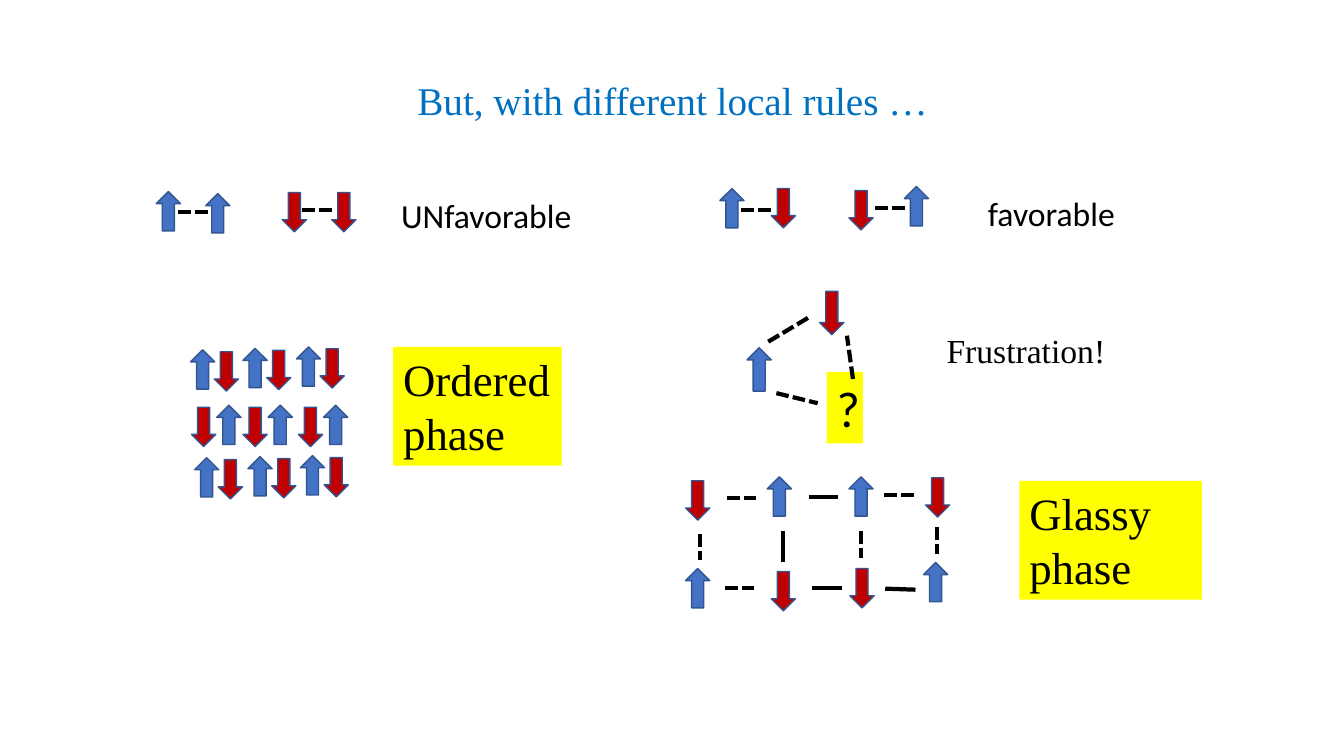
from lxml import etree
from pptx import Presentation
from pptx.dml.color import RGBColor
from pptx.enum import dml, shapes, text
from pptx.oxml.ns import qn
from pptx.util import Inches, Pt

BLUE = RGBColor(0x44, 0x72, 0xC4)
RED = RGBColor(0xC0, 0x00, 0x00)
OUTLINE = RGBColor(0x32, 0x54, 0x91)
TITLE_BLUE = RGBColor(0x00, 0x70, 0xC0)
YELLOW = RGBColor(0xFF, 0xFF, 0x00)
BLACK = RGBColor(0x00, 0x00, 0x00)
SERIF, SANS = "Times New Roman", "Calibri"
SPIN_W, SPIN_H = 0.24, 0.39

PAIRS = [
    ("up", 1.55, 1.9), ("up", 2.04, 1.92),
    ("down", 2.8, 1.91), ("down", 3.29, 1.91),
    ("up", 7.14, 1.87), ("down", 7.65, 1.87),
    ("down", 8.42, 1.89), ("up", 8.97, 1.85),
]
GLASS = [
    ("down", 6.8, 4.77), ("up", 7.61, 4.73), ("up", 8.42, 4.73), ("down", 9.18, 4.74),
    ("up", 6.8, 5.64), ("down", 7.65, 5.67), ("down", 8.43, 5.64), ("up", 9.16, 5.58),
]
DASHED_BONDS = [
    (1.77, 2.1, 2.09, 2.1), (3, 2.08, 3.32, 2.08),
    (7.35, 2.08, 7.67, 2.08), (8.68, 2.06, 9, 2.06),
    (7.62, 3.39, 8.02, 3.15), (7.7, 3.9, 8.11, 4), (8.46, 3.76, 8.4, 3.33),
    (7.21, 4.94, 7.53, 4.94), (8.77, 4.91, 9.09, 4.91), (7.19, 5.83, 7.51, 5.83),
    (6.94, 5.3, 6.94, 5.56), (8.54, 5.27, 8.54, 5.54), (9.29, 5.23, 9.29, 5.5),
]
SOLID_BONDS = [
    (8.02, 4.93, 8.31, 4.93), (7.77, 5.27, 7.77, 5.58),
    (8.05, 5.83, 8.35, 5.83), (8.78, 5.84, 9.08, 5.85),
]
LABELS = [
    ("UNfavorable", (3.88, 1.88, 1.93, 0.5), SANS, 24, None),
    ("favorable", (9.7, 1.86, 1.83, 0.5), SANS, 24, None),
    ("Frustration!", (9.29, 3.22, 2.24, 0.5), SERIF, 24, None),
    ("Ordered\nphase", (3.9, 3.44, 1.67, 1.18), SERIF, 32, YELLOW),
    ("?", (8.2, 3.69, 0.36, 0.71), SANS, 36, YELLOW),
    ("Glassy\nphase", (10.11, 4.77, 1.81, 1.18), SERIF, 32, YELLOW),
]


def box(*lengths):
    return [Inches(v) for v in lengths]


def style(p, size, name, color):
    for key, value in {"size": Pt(size), "name": name}.items():
        setattr(p.font, key, value)
    p.font.color.rgb = color


def add_title(s, words):
    sp = s.shapes.title
    sp.left, sp.top, sp.width, sp.height = box(0.92, 0.4, 11.5, 1.23)
    tf = sp.text_frame
    tf.text = words
    tf.vertical_anchor = text.MSO_ANCHOR.MIDDLE
    p = tf.paragraphs[0]
    for key, value in {"alignment": text.PP_ALIGN.CENTER, "line_spacing": 0.9}.items():
        setattr(p, key, value)
    style(p, 28, SERIF, TITLE_BLUE)


def add_label(s, words, at, name, size, fill):
    sp = s.shapes.add_textbox(*box(*at))
    if fill is not None:
        sp.fill.solid()
        sp.fill.fore_color.rgb = fill
    tf = sp.text_frame
    tf.word_wrap = True
    tf.text = words
    for p in tf.paragraphs:
        style(p, size, name, BLACK)


def add_spin(parent, way, left, top, height=SPIN_H):
    sp = parent.shapes.add_shape(
        shapes.MSO_SHAPE.UP_ARROW, *box(left, top, SPIN_W, height))
    sp.shadow.inherit = False
    sp.fill.solid()
    sp.fill.fore_color.rgb = BLUE if way == "up" else RED
    sp.line.color.rgb = OUTLINE
    sp.line.width = Pt(1)
    if way == "down":
        sp._element.spPr.get_or_add_xfrm().set("flipV", "1")


def add_spin_row(s, first, second, lefts, top, rise, gap, shift):
    row = s.shapes.add_group_shape()
    for i, left in enumerate(lefts):
        y = top - rise * i
        add_spin(row, first, left, y)
        add_spin(row, second, left + gap, y + shift)


def add_bond(s, ends, dashed):
    cn = s.shapes.add_connector(shapes.MSO_CONNECTOR.STRAIGHT, *box(*ends))
    cn.line.color.rgb = BLACK
    cn.line.width = Pt(3)
    if dashed:
        cn.line.dash_style = dml.MSO_LINE.SQUARE_DOT
    etree.SubElement(cn._element.spPr, qn("a:effectLst"))


def main():
    prs = Presentation()
    prs.slide_width, prs.slide_height = box(13.33, 7.5)
    s = prs.slides.add_slide(prs.slide_layouts[5])
    add_title(s, "But, with different local rules …")
    for label in LABELS:
        add_label(s, *label)
    for spin in PAIRS:
        add_spin(s, *spin)
    add_spin_row(s, "up", "down", (1.89, 2.41, 2.94), 3.47, 0.015, 0.235, 0.02)
    add_spin_row(s, "down", "up", (1.9, 2.41, 2.96), 4.04, 0, 0.25, -0.02)
    add_spin_row(s, "up", "down", (1.93, 2.46, 2.98), 4.54, 0.01, 0.235, 0.02)
    add_spin(s, "up", 7.41, 3.45, 0.43)
    add_spin(s, "down", 8.13, 2.89, 0.43)
    lattice = s.shapes.add_group_shape()
    for spin in GLASS:
        add_spin(lattice, *spin)
    for ends in DASHED_BONDS:
        add_bond(s, ends, True)
    for ends in SOLID_BONDS:
        add_bond(s, ends, False)
    prs.save("out.pptx")


if __name__ == "__main__":
    main()
